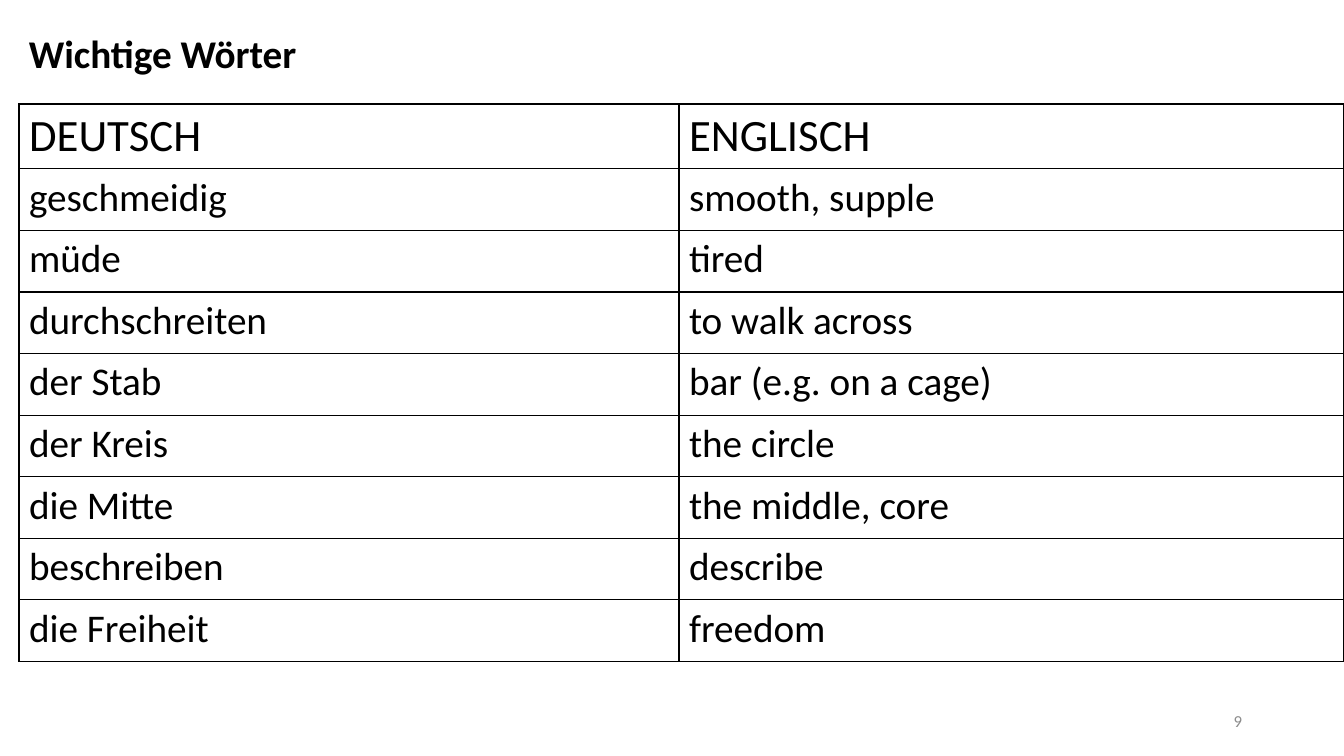
import dataclasses

import pptx
import pptx.dml.color
import pptx.enum.text
import pptx.oxml
import pptx.oxml.ns
import pptx.util

EMU_PER_PX = 914400 / 100.8
SLIDE_WIDTH, SLIDE_HEIGHT = 1344, 756
MARGIN_LEFT = 19

VOCABULARY = [
    ("DEUTSCH", "ENGLISCH"),
    ("geschmeidig", "smooth, supple"),
    ("müde", "tired"),
    ("durchschreiten", "to walk across"),
    ("der Stab", "bar (e.g. on a cage)"),
    ("der Kreis", "the circle"),
    ("die Mitte", "the middle, core"),
    ("beschreiben", "describe"),
    ("die Freiheit", "freedom"),
]


@dataclasses.dataclass(frozen=True)
class Theme:
    font: str = "Calibri"
    ink: str = "000000"
    muted: str = "8C8C8C"
    header_size: int = 32
    body_size: int = 28
    number_size: int = 12
    border_width: int = 1


def px(length):
    return pptx.util.Emu(round(length * EMU_PER_PX))


class SlideBuilder:
    def __init__(self, slide, theme):
        self.slide = slide
        self.theme = theme

    def set_text(self, text_frame, text, size, color, bold=False):
        text_frame.text = text
        font = text_frame.paragraphs[0].runs[0].font
        font.name = self.theme.font
        font.size = pptx.util.Pt(size)
        font.bold = bold
        font.color.rgb = pptx.dml.color.RGBColor.from_string(color)

    def text_box(self, left, top, width, height, text, size, color, bold=False):
        shape = self.slide.shapes.add_textbox(px(left), px(top), px(width), px(height))
        self.set_text(shape.text_frame, text, size, color, bold)
        return shape.text_frame

    def title(self, left, top, width, height, text):
        frame = self.text_box(left, top, width, height, text,
                              self.theme.body_size, self.theme.ink, bold=True)
        frame.word_wrap = False
        frame.auto_size = pptx.enum.text.MSO_AUTO_SIZE.SHAPE_TO_FIT_TEXT

    def slide_number(self, left, top, width, height, number):
        frame = self.text_box(left, top, width, height, str(number),
                              self.theme.number_size, self.theme.muted)
        frame.word_wrap = True
        frame.vertical_anchor = pptx.enum.text.MSO_ANCHOR.MIDDLE
        frame.paragraphs[0].alignment = pptx.enum.text.PP_ALIGN.RIGHT

    def border(self, cell):
        """Draw a thin line on all four sides of the cell."""
        properties = cell._tc.get_or_add_tcPr()
        width = pptx.util.Pt(self.theme.border_width)
        for position, side in enumerate(("lnL", "lnR", "lnT", "lnB")):
            line = pptx.oxml.parse_xml(
                f'<a:{side} {pptx.oxml.ns.nsdecls("a")} w="{width}"><a:solidFill>'
                f'<a:srgbClr val="{self.theme.ink}"/></a:solidFill></a:{side}>')
            properties.insert(position, line)

    def table(self, left, top, column_widths, height, rows):
        """Add a bordered table with equal rows and a larger first row."""
        table = self.slide.shapes.add_table(
            len(rows), len(column_widths), px(left), px(top),
            px(sum(column_widths)), px(height)).table
        table.first_row = table.horz_banding = False
        for column, width in zip(table.columns, column_widths):
            column.width = px(width)
        for row_index, words in enumerate(rows):
            size = self.theme.body_size if row_index else self.theme.header_size
            for column_index, word in enumerate(words):
                cell = table.cell(row_index, column_index)
                self.set_text(cell.text_frame, word, size, self.theme.ink)
                cell.fill.background()
                self.border(cell)


def main():
    presentation = pptx.Presentation()
    presentation.slide_width = px(SLIDE_WIDTH)
    presentation.slide_height = px(SLIDE_HEIGHT)
    slide = presentation.slides.add_slide(presentation.slide_layouts[6])
    builder = SlideBuilder(slide, Theme())
    builder.table(MARGIN_LEFT, 104, (660, 665), 554, VOCABULARY)
    builder.title(MARGIN_LEFT, 24, 300, 57, "Wichtige Wörter")
    builder.slide_number(950, 701, 302, 40, 9)
    presentation.save("out.pptx")


if __name__ == "__main__":
    main()
